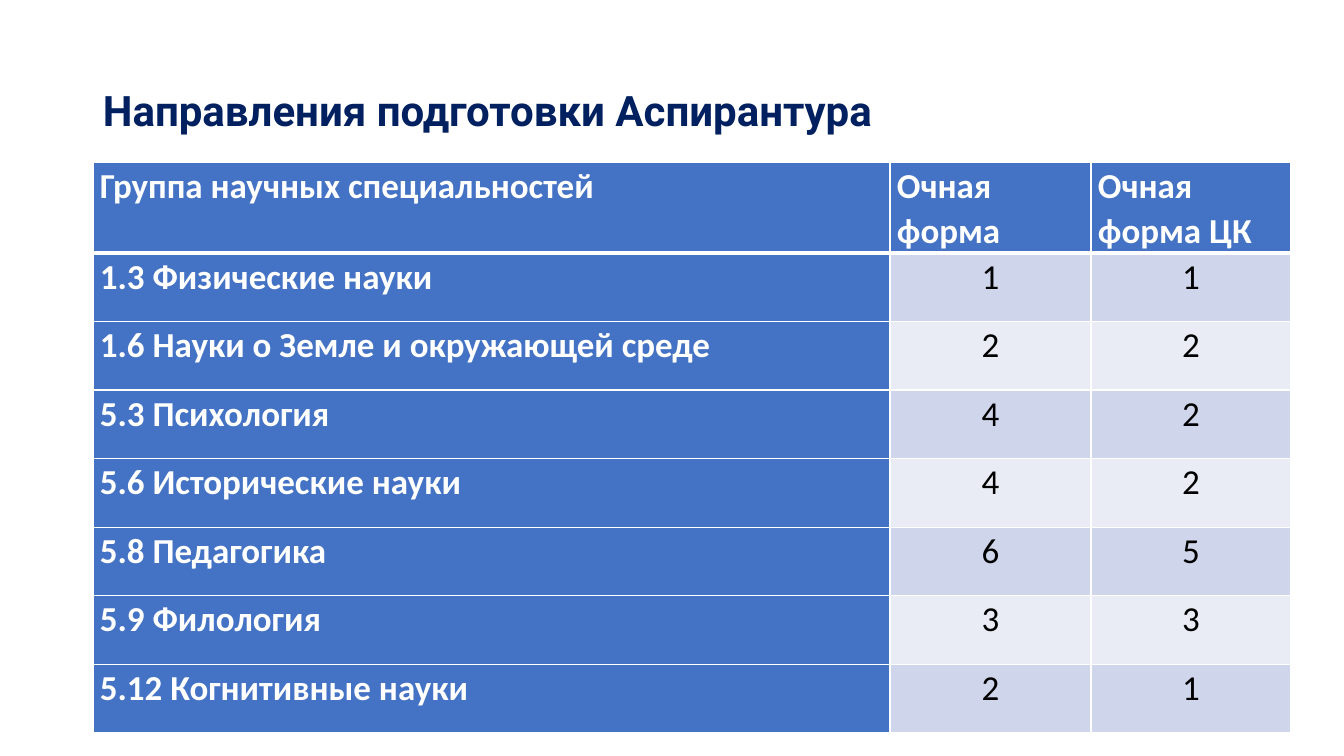
from lxml.etree import SubElement
from pptx import Presentation
from pptx.dml.color import RGBColor
from pptx.enum.text import MSO_ANCHOR, PP_ALIGN
from pptx.oxml.ns import qn
from pptx.util import Emu, Pt

# Content
TITLE = "Направления подготовки Аспирантура"
HEADER = ("Группа научных специальностей", "Очная форма", "Очная форма ЦК")
GROUPS = [
    ("1.3 Физические науки", 1, 1),
    ("1.6 Науки о Земле и окружающей среде", 2, 2),
    ("5.3 Психология", 4, 2),
    ("5.6 Исторические науки", 4, 2),
    ("5.8 Педагогика", 6, 5),
    ("5.9 Филология", 3, 3),
    ("5.12 Когнитивные науки", 2, 1),
]

THEME = {
    "title_font": "Roboto", "title_size": 30, "title_color": "002060",
    "font": "Calibri", "size": 25,
    "head_fill": "4472C4", "head_text": "FFFFFF",
    "bands": ("CFD5EA", "E9EBF5"), "text": "000000",
    "border": "FFFFFF", "thin": 1, "thick": 3,
}

# Geometry in px
SLIDE_W, SLIDE_H = 1344, 756
TITLE_BOX = (93, 40, 1159, 146)
TABLE_LEFT, TABLE_TOP, TABLE_H, HEADER_H = 93, 162, 571, 91
COL_WIDTHS = (797, 201, 200)
CELL_PAD = 7


def px(n):
    return Emu(round(n * 914400 / 100.8))


def set_font(p, name, size, color, bold):
    p.font.name = name
    p.font.size = Pt(size)
    p.font.bold = bold
    p.font.color.rgb = RGBColor.from_string(color)


def set_borders(cell, top, bottom):
    tc_pr = cell._tc.get_or_add_tcPr()
    thin = THEME["thin"]
    for side, width in (("L", thin), ("R", thin), ("T", top), ("B", bottom)):
        ln = SubElement(tc_pr, qn(f"a:ln{side}"), w=str(Pt(width)))
        fill = SubElement(ln, qn("a:solidFill"))
        SubElement(fill, qn("a:srgbClr"), val=THEME["border"])


def add_title(s):
    tf = s.shapes.add_textbox(*map(px, TITLE_BOX)).text_frame
    tf.word_wrap = True
    tf.vertical_anchor = MSO_ANCHOR.MIDDLE
    p = tf.paragraphs[0]
    p.text = TITLE
    p.line_spacing = 0.9
    set_font(p, THEME["title_font"], THEME["title_size"], THEME["title_color"], True)


def fill_cell(cell, value, row, col):
    is_head = row == 0 or col == 0
    top = THEME["thick"] if row == 1 else THEME["thin"]
    bottom = THEME["thick"] if row == 0 else THEME["thin"]
    set_borders(cell, top, bottom)
    cell.fill.solid()
    color = THEME["head_fill"] if is_head else THEME["bands"][(row - 1) % 2]
    cell.fill.fore_color.rgb = RGBColor.from_string(color)
    cell.margin_left = cell.margin_right = px(CELL_PAD)
    cell.margin_top = cell.margin_bottom = 0
    p = cell.text_frame.paragraphs[0]
    p.text = str(value)
    p.line_spacing = 1.07
    p.alignment = PP_ALIGN.LEFT if is_head else PP_ALIGN.CENTER
    set_font(p, THEME["font"], THEME["size"],
             THEME["head_text"] if is_head else THEME["text"], is_head)


def add_groups_table(s):
    rows = [HEADER, *GROUPS]
    table = s.shapes.add_table(
        len(rows), len(HEADER), px(TABLE_LEFT), px(TABLE_TOP),
        px(sum(COL_WIDTHS)), px(TABLE_H)).table
    table.first_col = True
    for column, width in zip(table.columns, COL_WIDTHS):
        column.width = px(width)
    body_h = (TABLE_H - HEADER_H) / len(GROUPS)
    for r, values in enumerate(rows):
        table.rows[r].height = px(body_h if r else HEADER_H)
        for c, value in enumerate(values):
            fill_cell(table.cell(r, c), value, r, c)


def main():
    prs = Presentation()
    prs.slide_width, prs.slide_height = px(SLIDE_W), px(SLIDE_H)
    s = prs.slides.add_slide(prs.slide_layouts[6])
    add_title(s)
    add_groups_table(s)
    prs.save("out.pptx")


if __name__ == "__main__":
    main()
